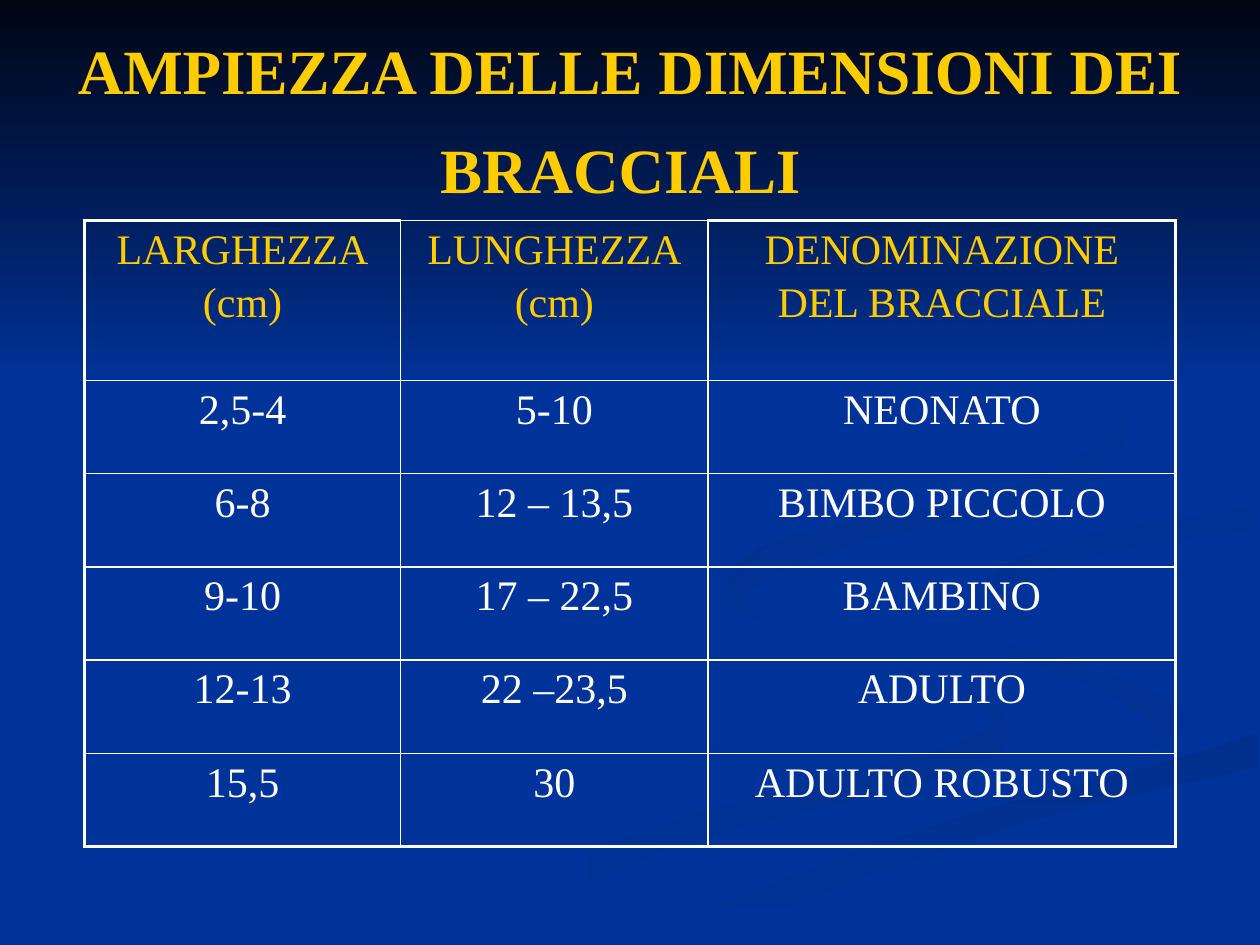
import dataclasses

import lxml.etree
import pptx
import pptx.dml.color
import pptx.enum.shapes
import pptx.enum.text
import pptx.oxml.ns
import pptx.util

# The slide is a grid of 1000 columns by 750 rows
UNIT = pptx.util.Inches(0.01)
COLS, ROWS = 1000, 750
BLUE, GOLD, WHITE = "003399", "FFCC00", "FFFFFF"
CENTER = pptx.enum.text.PP_ALIGN.CENTER
THIN, THICK = 1, 2.25
STEPS = 4


@dataclasses.dataclass
class Ribbon:
    """A band between two curves, each given by a few knots."""
    start: str
    end: str
    angle: int
    out: list
    back: list


RIBBONS = [
    Ribbon(BLUE, "003193", 0,
           [(575, 459), (581, 484), (697, 525), (785, 562), (749, 594), (539, 649), (300, 749)],
           [(361, 749), (532, 674), (756, 614), (800, 581), (767, 547), (614, 496), (575, 459)]),
    Ribbon(BLUE, "003193", 45,
           [(724, 464), (755, 505), (868, 545), (917, 581), (894, 605)],
           [(894, 605), (943, 570), (888, 535), (758, 498), (724, 464)]),
    Ribbon("002F8C", BLUE, 90,
           [(503, 749), (599, 706), (764, 647), (998, 581)],
           [(998, 609), (821, 651), (649, 710), (571, 749)]),
    Ribbon(BLUE, BLUE, 0,
           [(477, 749), (663, 668), (892, 605), (943, 570), (871, 530), (745, 490),
            (732, 446), (851, 411), (999, 387)],
           [(999, 402), (850, 427), (781, 463), (832, 498), (999, 538), (999, 581),
            (765, 647), (599, 706), (503, 749)]),
    Ribbon("003091", BLUE, 45,
           [(998, 402), (865, 424), (781, 460), (826, 496)],
           [(826, 496), (806, 468), (878, 439), (998, 420)]),
    Ribbon("002F8E", BLUE, 45,
           [(762, 233), (864, 291), (894, 344), (841, 396), (683, 430), (593, 470), (622, 500)],
           [(622, 500), (577, 462), (625, 426), (791, 392), (889, 335), (846, 279), (762, 233)]),
]

HEAD = ["LARGHEZZA\n(cm)", "LUNGHEZZA\n(cm)", "DENOMINAZIONE\nDEL BRACCIALE"]
BODY = [
    ["2,5-4", "5-10", "NEONATO"],
    ["6-8", "12 – 13,5", "BIMBO PICCOLO"],
    ["9-10", "17 – 22,5", "BAMBINO"],
    ["12-13", "22 –23,5", "ADULTO"],
    ["15,5", "30", "ADULTO ROBUSTO"],
]
WIDTHS = [251, 244, 371]
HEIGHTS = [127] + [74] * len(BODY)


def color(code: str) -> pptx.dml.color.RGBColor:
    return pptx.dml.color.RGBColor.from_string(code)


def style(font, code: str, **form) -> None:
    font.color.rgb = color(code)
    for name, value in ({"name": "Times New Roman"} | form).items():
        setattr(font, name, value)


def shade(shape, start: str, end: str, angle: int) -> None:
    """Fill with a gradient whose angle runs clockwise."""
    shape.shadow.inherit = False
    shape.line.fill.background()
    if start == end:
        shape.fill.solid()
        shape.fill.fore_color.rgb = color(start)
        return
    shape.fill.gradient()
    shape.fill.gradient_angle = -angle % 360
    for stop, code in zip(shape.fill.gradient_stops, (start, end)):
        stop.color.rgb = color(code)


def blend(a: int, b: int, c: int, d: int, t: float) -> float:
    """Catmull-Rom value between b and c."""
    return b + t * (c - a + t * (2 * a - 5 * b + 4 * c - d + t * (3 * (b - c) + d - a))) / 2


def smooth(knots: list) -> list:
    ends = [knots[0], *knots, knots[-1]]
    curve = [tuple(blend(*axis, step / STEPS) for axis in zip(*quad))
             for quad in zip(ends, ends[1:], ends[2:], ends[3:])
             for step in range(STEPS)]
    return curve + [knots[-1]]


def draw_ribbon(shapes, item: Ribbon) -> None:
    points = smooth(item.out) + smooth(item.back)
    form = shapes.build_freeform(*points[0], scale=UNIT)
    form.add_line_segments(points[1:], close=True)
    shade(form.convert_to_shape(), item.start, item.end, item.angle)


def edge(cell, side: str, width: float) -> None:
    props = cell._tc.get_or_add_tcPr()
    tag = pptx.oxml.ns.qn
    line = lxml.etree.SubElement(props, tag(f"a:ln{side}"), w=str(pptx.util.Pt(width)))
    fill = lxml.etree.SubElement(line, tag("a:solidFill"))
    lxml.etree.SubElement(fill, tag("a:srgbClr"), val=WHITE)


def fill_cell(cell, text: str, code: str, edges: dict) -> None:
    for side, thick in edges.items():
        edge(cell, side, THICK if thick else THIN)
    cell.fill.background()
    cell.text = text
    for order, para in enumerate(cell.text_frame.paragraphs):
        para.alignment = CENTER
        if order:
            para.space_before = pptx.util.Pt(4)
        style(para.runs[0].font, code, size=pptx.util.Pt(24))


def draw_table(shapes, left: int, top: int) -> None:
    frame = shapes.add_table(len(HEIGHTS), len(WIDTHS), left * UNIT, top * UNIT,
                             sum(WIDTHS) * UNIT, sum(HEIGHTS) * UNIT)
    table = frame.table
    table.first_row = table.horz_banding = False
    for col, width in zip(table.columns, WIDTHS):
        col.width = width * UNIT
    for row, height in zip(table.rows, HEIGHTS):
        row.height = height * UNIT
    last_row, last_col = len(HEIGHTS) - 1, len(WIDTHS) - 1
    for r, texts in enumerate([HEAD] + BODY):
        for c, text in enumerate(texts):
            # Heavy outer frame, but a thin top over the middle column
            edges = {"L": c == 0, "R": c == last_col,
                     "T": r == 0 and c in (0, last_col), "B": r == last_row}
            fill_cell(table.cell(r, c), text, WHITE if r else GOLD, edges)


def set_title(title) -> None:
    place = {"left": 50, "top": 30, "width": 900, "height": 125}
    for name, value in place.items():
        setattr(title, name, value * UNIT)
    frame = title.text_frame
    frame.auto_size = pptx.enum.text.MSO_AUTO_SIZE.NONE
    frame.vertical_anchor = pptx.enum.text.MSO_ANCHOR.MIDDLE
    para = frame.paragraphs[0]
    para.alignment = CENTER
    para.line_spacing = 1.1
    parts = [("AMPIEZZA DELLE DIMENSIONI DEI BRACCIALI", GOLD, 36, True),
             (" ", "E5E5FF", 44, False)]
    for text, code, size, bold in parts:
        run = para.add_run()
        run.text = text
        style(run.font, code, size=pptx.util.Pt(size), bold=bold)
    # Bring the title in front of the backdrop
    title.element.getparent().append(title.element)


def main() -> None:
    deck = pptx.Presentation()
    deck.slide_width, deck.slide_height = COLS * UNIT, ROWS * UNIT
    slide = deck.slides.add_slide(deck.slide_layouts[5])
    shapes = slide.shapes

    # Backdrop
    slide.background.fill.solid()
    slide.background.fill.fore_color.rgb = color(BLUE)
    for item in RIBBONS:
        draw_ribbon(shapes, item)
    sky = shapes.add_shape(pptx.enum.shapes.MSO_SHAPE.RECTANGLE, 0, 0, COLS * UNIT, 308 * UNIT)
    shade(sky, "000514", BLUE, 90)

    # Title and table
    set_title(shapes.title)
    draw_table(shapes, 67, 175)
    deck.save("out.pptx")


if __name__ == "__main__":
    main()
